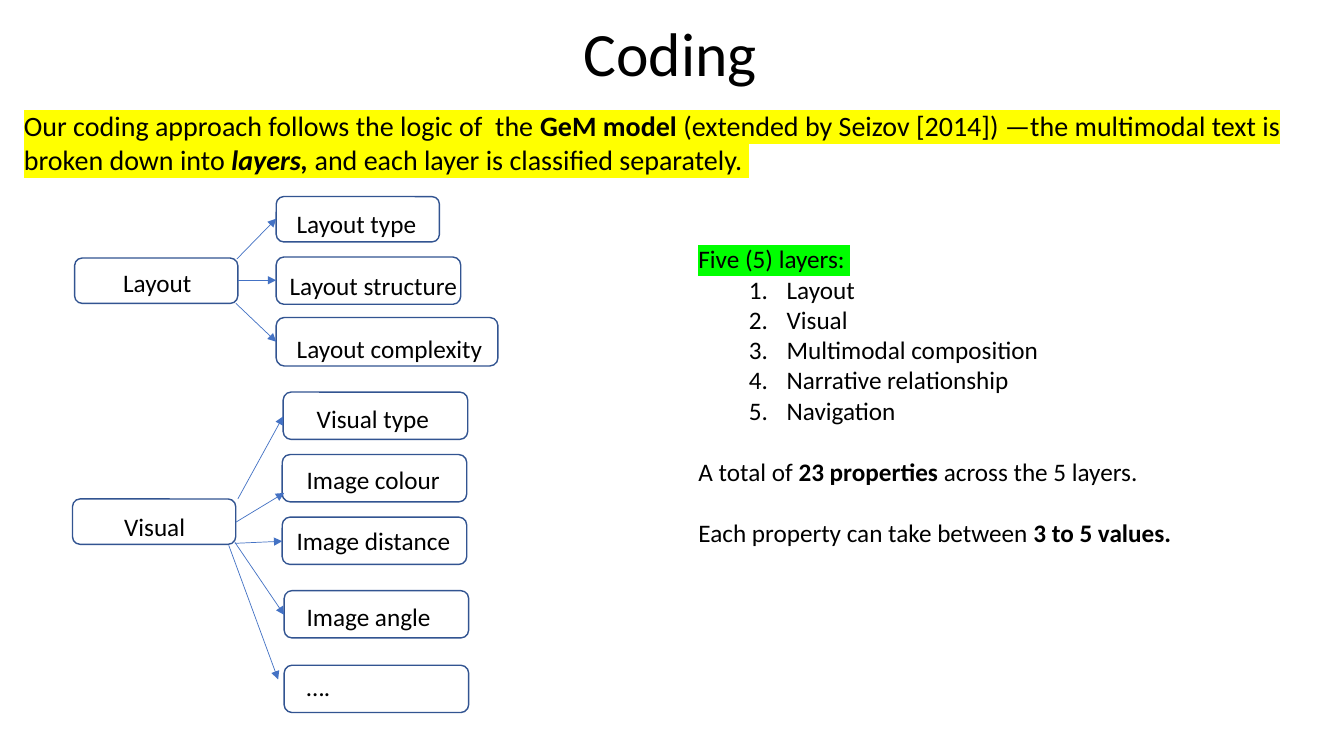
from dataclasses import dataclass

import lxml.etree
import pptx
import pptx.dml.color
import pptx.enum.shapes
import pptx.enum.text
import pptx.oxml.ns
import pptx.util
from pptx.util import Pt

BLACK = "000000"
OUTLINE = "325491"
ARROW = "4472C4"
YELLOW = "FFFF00"
GREEN = "00FF00"
FONT = "Calibri"


@dataclass(frozen=True)
class Node:
    label: str
    left: float
    top: float
    width: float
    height: float
    indent: float
    drop: float


@dataclass(frozen=True)
class Arrow:
    start: tuple[float, float]
    end: tuple[float, float]


@dataclass(frozen=True)
class Phrase:
    text: str
    bold: bool = False
    italic: bool = False
    highlight: str = ""


@dataclass(frozen=True)
class Line:
    phrases: tuple[Phrase, ...]
    gap: float = 0
    numbered: bool = False


NODES = (
    Node("Layout", 53.3, 184.3, 116.6, 32.4, 33.1, 5),
    Node("Layout type", 197.3, 140.4, 116.6, 32.4, 13, 6.5),
    Node("Layout structure", 197.3, 183.6, 131.8, 33.8, 8, 8),
    Node("Layout complexity", 197.3, 226.8, 158.4, 34.6, 13, 9.4),
    Node("Visual", 51.8, 356.4, 116.6, 32.4, 35.3, 7.2),
    Node("Visual type", 202.3, 280.1, 131.8, 33.8, 22.3, 6.5),
    Node("Image colour", 201.6, 324.7, 131.8, 33.8, 15.8, 5),
    Node("Image distance", 201.6, 369.4, 131.8, 33.8, 8.6, 4.3),
    Node("Image angle", 203, 421.9, 131.8, 33.8, 14.4, 5.8),
    Node("….", 203, 475.2, 131.8, 33.8, 14.4, 2.9),
)

ARROWS = (
    Arrow((169.2, 185), (197.3, 156.2)),
    Arrow((169.9, 200.2), (197.3, 200.2)),
    Arrow((168.5, 216.7), (197.3, 244.1)),
    Arrow((169.9, 356.4), (202.3, 297.4)),
    Arrow((168.5, 373), (203, 352.1)),
    Arrow((167.8, 388.1), (201.6, 386.6)),
    Arrow((167.8, 387.4), (203, 439.2)),
    Arrow((163.4, 389.5), (198.7, 485.3)),
)

TITLE = (Line((Phrase("Coding"),)),)

APPROACH = (
    Line((
        Phrase("Our coding approach follows the logic of  the ", highlight=YELLOW),
        Phrase("GeM model ", bold=True, highlight=YELLOW),
        Phrase("(extended by Seizov [2014]) —the multimodal text is broken down into ", highlight=YELLOW),
        Phrase("layers, ", bold=True, italic=True, highlight=YELLOW),
        Phrase("and each layer is classified separately. ", highlight=YELLOW),
    )),
)

LAYERS = ("Layout", "Visual", "Multimodal composition", "Narrative relationship", "Navigation")

SUMMARY = (
    Line((Phrase("Five (5) layers: ", highlight=GREEN),)),
    *(Line((Phrase(layer),), numbered=True) for layer in LAYERS),
    Line((Phrase("A total of "), Phrase("23 properties ", bold=True), Phrase("across the 5 layers.")), gap=22),
    Line((Phrase("Each property can take between "), Phrase("3 to 5 values.", bold=True)), gap=22),
)


def colour(value: str) -> pptx.dml.color.RGBColor:
    return pptx.dml.color.RGBColor.from_string(value)


def add_element(parent, tag: str, **attributes: str):
    return lxml.etree.SubElement(parent, pptx.oxml.ns.qn(tag), **attributes)


def style_font(font, size: float) -> None:
    font.name = FONT
    font.size = Pt(size)
    font.color.rgb = colour(BLACK)


def add_phrase(paragraph, phrase: Phrase) -> None:
    run = paragraph.add_run()
    run.text = phrase.text
    if phrase.bold:
        run.font.bold = True
    if phrase.italic:
        run.font.italic = True
    if phrase.highlight:
        highlight = add_element(run.font._element, "a:highlight")
        add_element(highlight, "a:srgbClr", val=phrase.highlight)


def number(paragraph) -> None:
    paragraph.level = 1
    properties = paragraph._p.get_or_add_pPr()
    properties.set("marL", str(Pt(63)))
    properties.set("indent", str(Pt(-27)))
    add_element(properties, "a:buFont", typeface="+mj-lt")
    add_element(properties, "a:buAutoNum", type="arabicPeriod")


def add_text(slide, lines: tuple[Line, ...], left: float, top: float, width: float, height: float, size: float):
    frame = slide.shapes.add_textbox(Pt(left), Pt(top), Pt(width), Pt(height)).text_frame
    frame.word_wrap = True
    for index, line in enumerate(lines):
        paragraph = frame.add_paragraph() if index else frame.paragraphs[0]
        if line.gap:
            paragraph.space_before = Pt(line.gap)
        if line.numbered:
            number(paragraph)
        style_font(paragraph.font, size)
        for phrase in line.phrases:
            add_phrase(paragraph, phrase)
    return frame


def add_node(slide, node: Node) -> None:
    box = slide.shapes.add_shape(
        pptx.enum.shapes.MSO_SHAPE.ROUNDED_RECTANGLE,
        Pt(node.left), Pt(node.top), Pt(node.width), Pt(node.height),
    )
    box.shadow.inherit = False
    box.fill.background()
    box.line.color.rgb = colour(OUTLINE)
    box.line.width = Pt(1)
    frame = box.text_frame
    frame.word_wrap = True
    frame.vertical_anchor = pptx.enum.text.MSO_ANCHOR.TOP
    frame.margin_left, frame.margin_top = Pt(node.indent), Pt(node.drop)
    frame.margin_right = frame.margin_bottom = 0
    label = frame.paragraphs[0]
    label.text = node.label
    label.alignment = pptx.enum.text.PP_ALIGN.LEFT
    style_font(label.font, 18)


def add_arrow(slide, arrow: Arrow) -> None:
    connector = slide.shapes.add_connector(
        pptx.enum.shapes.MSO_CONNECTOR.STRAIGHT, *map(Pt, arrow.start + arrow.end)
    )
    connector.line.color.rgb = colour(ARROW)
    connector.line.width = Pt(0.5)
    add_element(connector.line._get_or_add_ln(), "a:tailEnd", type="triangle")
    add_element(connector._element.spPr, "a:effectLst")


def main() -> None:
    presentation = pptx.Presentation()
    presentation.slide_width = Pt(960)
    presentation.slide_height = Pt(540)
    slide = presentation.slides.add_slide(presentation.slide_layouts[6])

    title = add_text(slide, TITLE, 64.8, -11.5, 828, 104.4, 44)
    title.vertical_anchor = pptx.enum.text.MSO_ANCHOR.MIDDLE
    title.paragraphs[0].alignment = pptx.enum.text.PP_ALIGN.CENTER
    title.paragraphs[0].line_spacing = 0.9

    add_text(slide, APPROACH, 10, 74.2, 964, 55.4, 20)
    for node in NODES:
        add_node(slide, node)
    for arrow in ARROWS:
        add_arrow(slide, arrow)
    add_text(slide, SUMMARY, 491.8, 170.6, 384.5, 247, 18)

    presentation.save("out.pptx")


if __name__ == "__main__":
    main()
